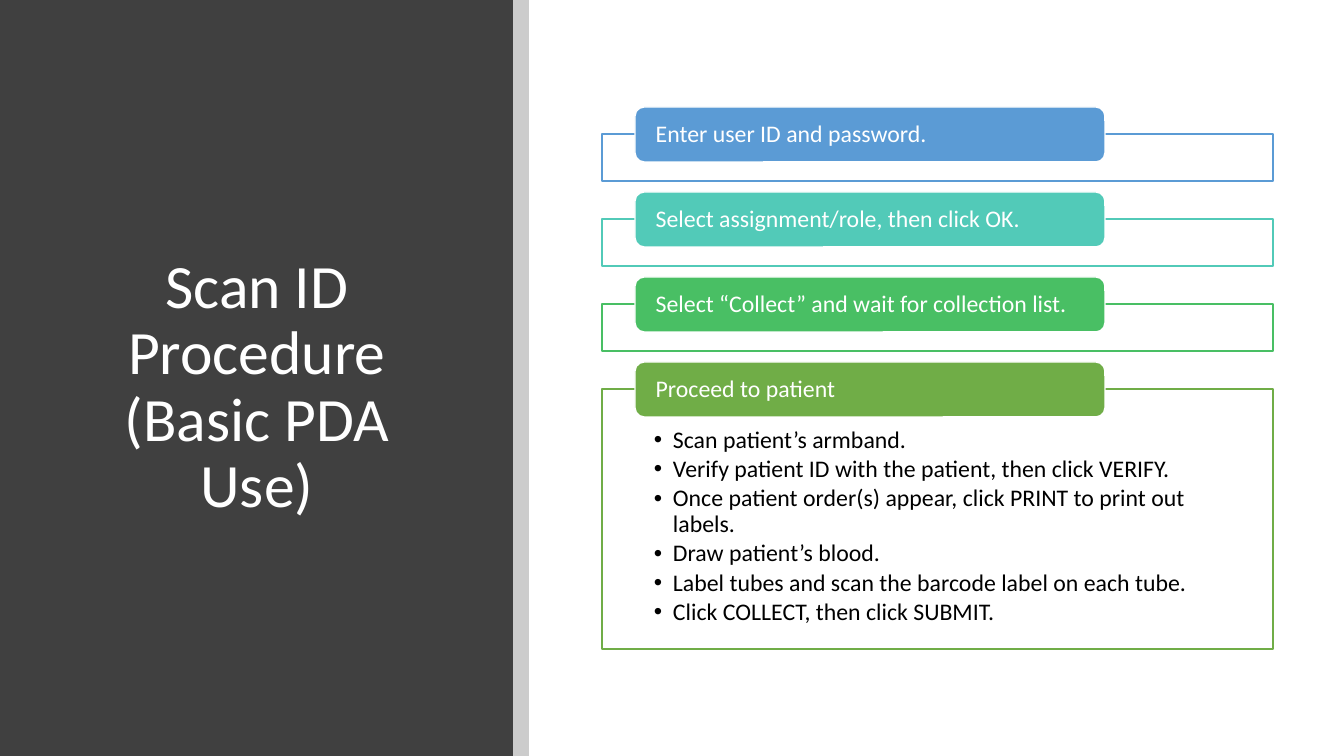
from lxml import etree
from pptx import Presentation
from pptx import util as u
from pptx.dml.color import RGBColor
from pptx.enum import shapes, text
from pptx.oxml.ns import qn

TITLE = ["Scan ID Procedure", "(Basic PDA Use)"]
STEPS = [
    ("Enter user ID and password.", "blue", []),
    ("Select assignment/role, then click OK.", "teal", []),
    ("Select “Collect” and wait for collection list.", "green", []),
    ("Proceed to patient", "olive", [
        "Scan patient’s armband.",
        "Verify patient ID with the patient, then click VERIFY.",
        "Once patient order(s) appear, click PRINT to print out labels.",
        "Draw patient’s blood.",
        "Label tubes and scan the barcode label on each tube.",
        "Click COLLECT, then click SUBMIT.",
    ]),
]
COLORS = {
    "panel": "404040", "white": "FFFFFF", "black": "000000",
    "blue": "5B9BD5", "teal": "52CAB8", "green": "49BF64", "olive": "70AD47",
}
FONT = "Calibri"
SLIDE_W, SLIDE_H = 1344, 756
PANEL_W, BAND_W = 513, 16
FRAME_X, FRAME_Y, FRAME_W, FRAME_H, DETAIL_H = 602, 134, 671, 47, 260
TAB_X, TAB_W, TAB_H, TAB_RISE = 635, 470, 55, 27
STEP_PITCH = 85
BULLET_INDENT = 19


def px(n):
    return u.Emu(round(n * 914400 / 100.8))


def rgb(name):
    return RGBColor.from_string(COLORS[name])


def add_block(kind, box, fill, line=None, opacity=100):
    block = slide.shapes.add_shape(kind, *map(px, box))
    block.shadow.inherit = False
    block.fill.solid()
    block.fill.fore_color.rgb = rgb(fill)
    if opacity < 100:
        color = block.fill._xPr.find(qn("a:solidFill"))[0]
        etree.SubElement(color, qn("a:alpha"), val=str(opacity * 1000))
    if line:
        block.line.color.rgb = rgb(line)
        block.line.width = u.Pt(1)
    else:
        block.line.fill.background()
    return block


def set_frame(frame, insets, anchor):
    frame.word_wrap = True
    frame.vertical_anchor = anchor
    (frame.margin_left, frame.margin_top,
     frame.margin_right, frame.margin_bottom) = map(px, insets)


def add_run(paragraph, words, size, color, align):
    paragraph.alignment = align
    paragraph.line_spacing = 0.9
    run = paragraph.add_run()
    run.text = words
    run.font.name = FONT
    run.font.size = u.Pt(size)
    run.font.color.rgb = rgb(color)


def add_details(frame, details):
    set_frame(frame, (52, 39, 52, 13), text.MSO_ANCHOR.TOP)
    for i, detail in enumerate(details):
        paragraph = frame.add_paragraph() if i else frame.paragraphs[0]
        add_run(paragraph, detail, 17, "black", text.PP_ALIGN.LEFT)
        paragraph.space_after = u.Pt(2.5)
        props = paragraph._p.get_or_add_pPr()
        props.set("marL", str(px(BULLET_INDENT)))
        props.set("indent", str(-px(BULLET_INDENT)))
        etree.SubElement(props, qn("a:buFont"), typeface="Arial")
        etree.SubElement(props, qn("a:buChar"), char="•")


deck = Presentation()
deck.slide_width, deck.slide_height = px(SLIDE_W), px(SLIDE_H)
slide = deck.slides.add_slide(deck.slide_layouts[6])
RECT = shapes.MSO_SHAPE.RECTANGLE
ROUNDED = shapes.MSO_SHAPE.ROUNDED_RECTANGLE

add_block(RECT, (0, 0, PANEL_W, SLIDE_H), "panel")
add_block(RECT, (PANEL_W, 0, BAND_W, SLIDE_H), "black", opacity=20)

title = slide.shapes.add_textbox(*map(px, (73, 90, 368, 596))).text_frame
set_frame(title, (10, 5, 10, 5), text.MSO_ANCHOR.MIDDLE)
heading = title.paragraphs[0]
for i, words in enumerate(TITLE):
    if i:
        heading.add_line_break()
    add_run(heading, words, 44, "white", text.PP_ALIGN.CENTER)

for i, (step, color, details) in enumerate(STEPS):
    top = FRAME_Y + i * STEP_PITCH
    height = DETAIL_H if details else FRAME_H
    outline = add_block(RECT, (FRAME_X, top, FRAME_W, height), "white", color, 90)
    if details:
        add_details(outline.text_frame, details)
    tab = add_block(ROUNDED, (TAB_X, top - TAB_RISE, TAB_W, TAB_H), color, "white")
    set_frame(tab.text_frame, (18, 0, 18, 0), text.MSO_ANCHOR.MIDDLE)
    add_run(tab.text_frame.paragraphs[0], step, 17, "white", text.PP_ALIGN.LEFT)

deck.save("out.pptx")
